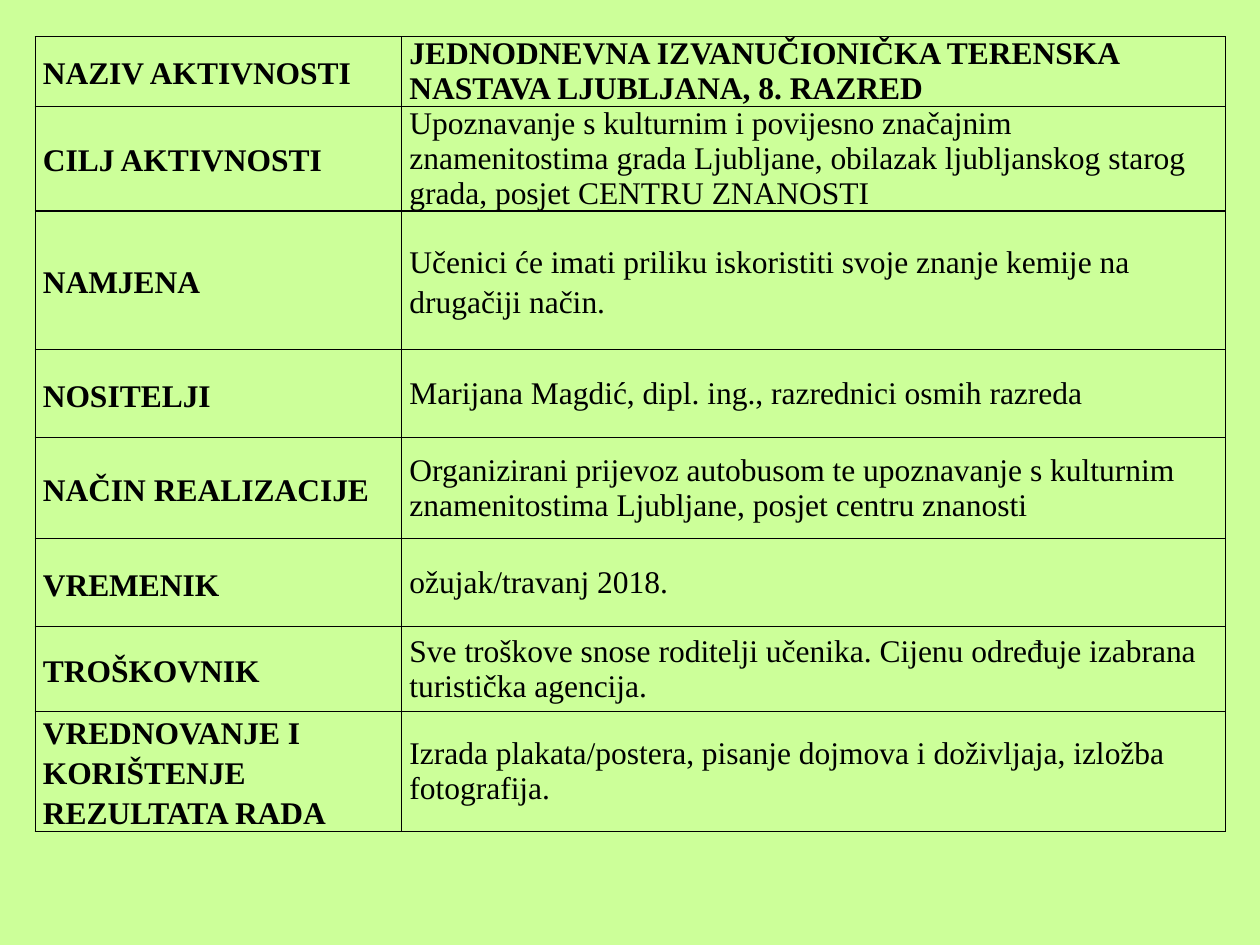
from lxml.etree import SubElement
from pptx import Presentation
from pptx.dml.color import RGBColor
from pptx.enum.text import MSO_ANCHOR
from pptx.oxml.ns import qn
from pptx.util import Inches, Pt

BACKGROUND = RGBColor(0xCC, 0xFF, 0x99)
BLACK = RGBColor(0, 0, 0)
FONT = "Times New Roman"
LABEL_SPACING = 1.15
COLUMN_WIDTHS = (2.91, 6.54)

# Label, description, row height in inches
ACTIVITY_ROWS = [
    ("NAZIV AKTIVNOSTI",
     "JEDNODNEVNA IZVANUČIONIČKA TERENSKA NASTAVA LJUBLJANA, 8. RAZRED", 0.52),
    ("CILJ AKTIVNOSTI",
     "Upoznavanje s kulturnim i povijesno značajnim znamenitostima grada "
     "Ljubljane, obilazak ljubljanskog starog grada, posjet CENTRU ZNANOSTI", 0.65),
    ("NAMJENA",
     "Učenici će imati priliku iskoristiti svoje znanje kemije na drugačiji način.", 1.1),
    ("NOSITELJI",
     "Marijana Magdić, dipl. ing., razrednici osmih razreda", 0.7),
    ("NAČIN REALIZACIJE",
     "Organizirani prijevoz autobusom te upoznavanje s kulturnim "
     "znamenitostima Ljubljane, posjet centru znanosti", 0.8),
    ("VREMENIK", "ožujak/travanj 2018.", 0.7),
    ("TROŠKOVNIK",
     "Sve troškove snose roditelji učenika. Cijenu određuje izabrana "
     "turistička agencija.", 0.67),
    ("VREDNOVANJE I KORIŠTENJE REZULTATA RADA",
     "Izrada plakata/postera, pisanje dojmova i doživljaja, izložba fotografija.", 0.87),
]


def add_borders(cell):
    properties = cell._tc.get_or_add_tcPr()
    for side in ("lnL", "lnR", "lnT", "lnB"):
        line = SubElement(properties, qn(f"a:{side}"), w=str(Pt(0.75)))
        fill = SubElement(line, qn("a:solidFill"))
        SubElement(fill, qn("a:srgbClr"), val=str(BLACK))


def fill_cell(cell, text, bold, line_spacing=None):
    add_borders(cell)
    cell.fill.background()
    cell.vertical_anchor = MSO_ANCHOR.MIDDLE
    cell.margin_left = cell.margin_right = Inches(0.06)
    cell.margin_top = cell.margin_bottom = 0
    cell.text = text
    paragraph = cell.text_frame.paragraphs[0]
    paragraph.line_spacing = line_spacing
    font = paragraph.font
    font.name, font.size, font.bold = FONT, Pt(18), bold
    font.color.rgb = BLACK


def add_activity_table(slide):
    height = sum(row[2] for row in ACTIVITY_ROWS)
    table = slide.shapes.add_table(
        len(ACTIVITY_ROWS), len(COLUMN_WIDTHS), Inches(0.28), Inches(0.29),
        Inches(sum(COLUMN_WIDTHS)), Inches(height)).table
    table.first_row = table.horz_banding = False
    for column, width in zip(table.columns, COLUMN_WIDTHS):
        column.width = Inches(width)
    for index, (label, description, row_height) in enumerate(ACTIVITY_ROWS):
        table.rows[index].height = Inches(row_height)
        fill_cell(table.cell(index, 0), label, True, LABEL_SPACING)
        fill_cell(table.cell(index, 1), description, index == 0,
                  LABEL_SPACING if label == "NAMJENA" else None)


def main():
    presentation = Presentation()
    presentation.slide_width, presentation.slide_height = Inches(10), Inches(7.5)
    slide = presentation.slides.add_slide(presentation.slide_layouts[6])
    slide.background.fill.solid()
    slide.background.fill.fore_color.rgb = BACKGROUND
    add_activity_table(slide)
    presentation.save("out.pptx")


if __name__ == "__main__":
    main()
